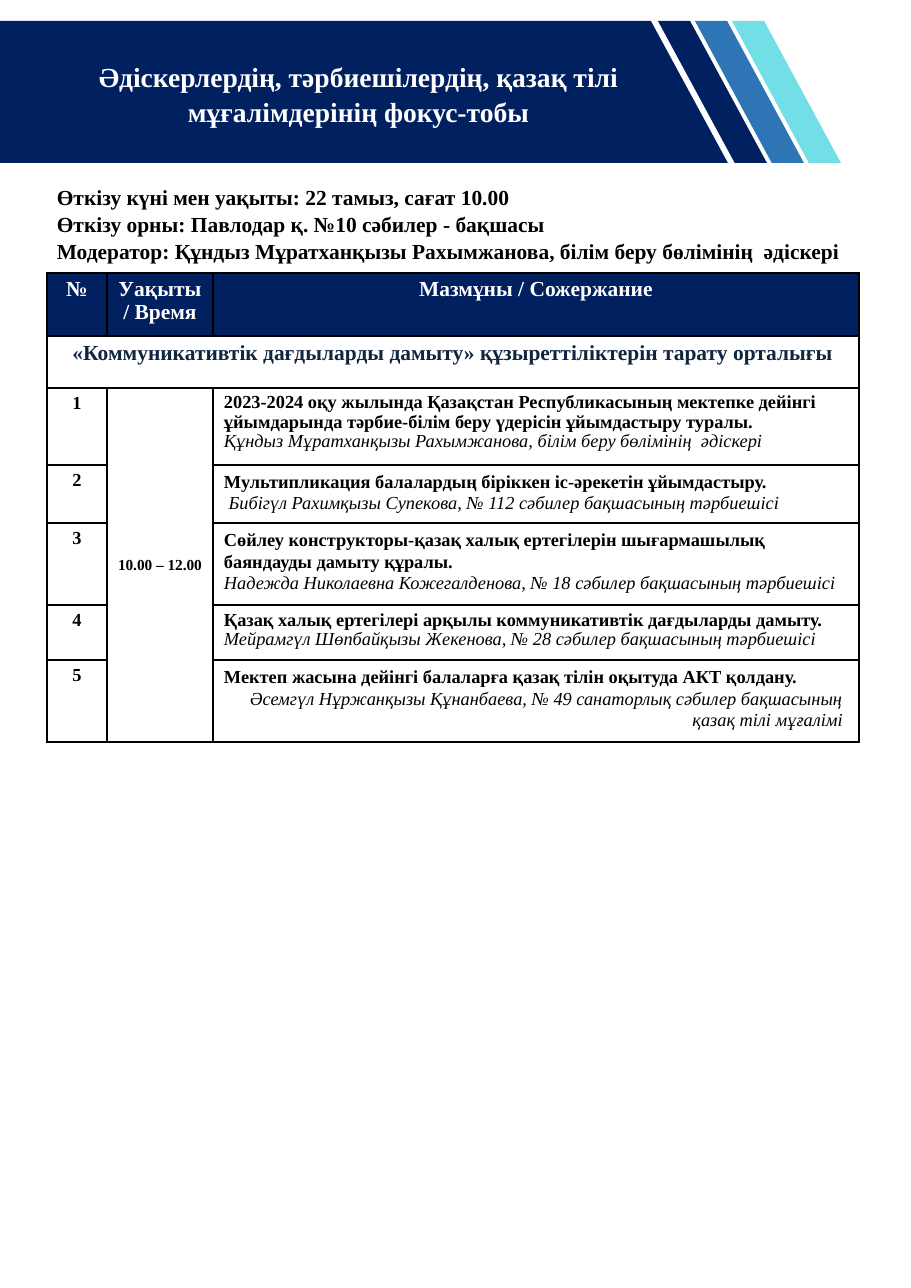
from lxml import etree
from pptx import Presentation
from pptx.dml.color import RGBColor
from pptx.enum.shapes import MSO_SHAPE
from pptx.enum.text import MSO_ANCHOR, PP_ALIGN
from pptx.oxml.ns import qn
from pptx.util import Pt

PX = 8298
FONT = "Times New Roman"
NAVY = RGBColor(0x00, 0x20, 0x60)
BLUE = RGBColor(0x2E, 0x75, 0xB6)
AQUA = RGBColor(0x71, 0xDF, 0xE5)
INK = RGBColor(0x10, 0x25, 0x3F)
BLACK = RGBColor(0, 0, 0)
WHITE = RGBColor(255, 255, 255)
LEFT, CENTER, RIGHT = PP_ALIGN.LEFT, PP_ALIGN.CENTER, PP_ALIGN.RIGHT
MIDDLE = MSO_ANCHOR.MIDDLE
PARALLELOGRAM = MSO_SHAPE.PARALLELOGRAM


def style(paragraph, size, color=BLACK, align=LEFT, spacing=1.0, italic=False):
    paragraph.alignment = align
    paragraph.line_spacing = spacing
    for run in paragraph.runs:
        run.font.name = FONT
        run.font.size = Pt(size)
        run.font.bold = not italic
        run.font.italic = italic
        run.font.color.rgb = color


def add_text(left, top, width, height, text, size, color, align):
    frame = slide.shapes.add_textbox(left * PX, top * PX, width * PX, height * PX).text_frame
    frame.word_wrap = True
    frame.text = text
    for paragraph in frame.paragraphs:
        style(paragraph, size, color, align, 1.05)


prs = Presentation()
prs.slide_width = 911 * PX
prs.slide_height = 1288 * PX
slide = prs.slides.add_slide(prs.slide_layouts[6])

outline = slide.shapes.build_freeform(0, 21, scale=PX)
outline.add_line_segments([(651, 21), (728, 163), (0, 163)], close=True)
banner = outline.convert_to_shape()
stripes = [(banner, NAVY)]
for i, color in enumerate((NAVY, BLUE, AQUA)):
    stripe = slide.shapes.add_shape(PARALLELOGRAM, (658 + 37 * i) * PX, 21 * PX, 109 * PX, 142 * PX)
    stripe.adjustments[0] = 0.705
    stripe._element.spPr.xfrm.set("flipV", "1")
    stripes.append((stripe, color))
for stripe, color in stripes:
    stripe.shadow.inherit = False
    stripe.fill.solid()
    stripe.fill.fore_color.rgb = color
    stripe.line.fill.background()

add_text(21, 53, 675, 78, "Әдіскерлердің, тәрбиешілердің, қазақ тілі мұғалімдерінің фокус-тобы",
         18, WHITE, CENTER)

HEADINGS = ["№", "Уақыты / Время", "Мазмұны / Сожержание"]
SECTION = "«Коммуникативтік дағдыларды дамыту» құзыреттіліктерін тарату орталығы"
TALKS = [
    ("2023-2024 оқу жылында Қазақстан Республикасының мектепке дейінгі ұйымдарында "
     "тәрбие-білім беру үдерісін ұйымдастыру туралы.",
     "Құндыз Мұратханқызы Рахымжанова, білім беру бөлімінің  әдіскері", 0.95, LEFT),
    ("Мультипликация балалардың біріккен іс-әрекетін ұйымдастыру.",
     " Бибігүл Рахимқызы Супекова, № 112 сәбилер бақшасының тәрбиешісі", 1.07, LEFT),
    ("Сөйлеу конструкторы-қазақ халық ертегілерін шығармашылық баяндауды дамыту құралы.",
     "Надежда Николаевна Кожегалденова, № 18 сәбилер бақшасының тәрбиешісі", 1.07, LEFT),
    ("Қазақ халық ертегілері арқылы коммуникативтік дағдыларды дамыту.",
     "Мейрамгүл Шөпбайқызы Жекенова, № 28 сәбилер бақшасының тәрбиешісі", 0.95, LEFT),
    ("Мектеп жасына дейінгі балаларға қазақ тілін оқытуда АКТ қолдану.",
     "Әсемгүл Нұржанқызы Құнанбаева, № 49 санаторлық сәбилер бақшасының қазақ тілі мұғалімі",
     1.07, RIGHT),
]
WIDTHS = [60, 106, 646]
HEIGHTS = [63, 52, 77, 58, 82, 55, 82]

agenda = slide.shapes.add_table(len(HEIGHTS), len(WIDTHS), 47 * PX, 273 * PX,
                                sum(WIDTHS) * PX, sum(HEIGHTS) * PX).table
for column, width in zip(agenda.columns, WIDTHS):
    column.width = width * PX
for row, height in zip(agenda.rows, HEIGHTS):
    row.height = height * PX

for r in range(len(HEIGHTS)):
    for c in range(len(WIDTHS)):
        cell = agenda.cell(r, c)
        if r == 0:
            cell.fill.solid()
            cell.fill.fore_color.rgb = NAVY
        else:
            cell.fill.background()
        properties = cell._tc.get_or_add_tcPr()
        for position, side in enumerate(("a:lnL", "a:lnR", "a:lnT", "a:lnB")):
            border = etree.Element(qn(side), w=str(Pt(1)))
            paint = etree.SubElement(border, qn("a:solidFill"))
            etree.SubElement(paint, qn("a:srgbClr"), val=str(BLACK))
            properties.insert(position, border)

for c, heading in enumerate(HEADINGS):
    cell = agenda.cell(0, c)
    cell.text = heading
    cell.margin_left = cell.margin_right = 6 * PX
    style(cell.text_frame.paragraphs[0], 14, WHITE, CENTER, 0.95)

section = agenda.cell(1, 0)
section.merge(agenda.cell(1, 2))
section.text = SECTION
style(section.text_frame.paragraphs[0], 14, INK, CENTER)

time_slot = agenda.cell(2, 1)
time_slot.merge(agenda.cell(6, 1))
time_slot.text = "10.00 – 12.00"
time_slot.vertical_anchor = MIDDLE
time_slot.margin_right = 4 * PX
style(time_slot.text_frame.paragraphs[0], 10)

for number, (topic, speaker, spacing, align) in enumerate(TALKS, start=1):
    number_cell = agenda.cell(number + 1, 0)
    number_cell.text = str(number)
    style(number_cell.text_frame.paragraphs[0], 12, align=CENTER)
    talk = agenda.cell(number + 1, 2)
    talk.text = topic + "\n" + speaker
    if align == RIGHT:
        talk.margin_right = 16 * PX
    topic_line, speaker_line = talk.text_frame.paragraphs
    style(topic_line, 12, spacing=spacing)
    style(speaker_line, 12, align=align, spacing=spacing, italic=True)

add_text(46, 177, 815, 115,
         "Өткізу күні мен уақыты: 22 тамыз, сағат 10.00\n"
         "Өткізу орны: Павлодар қ. №10 сәбилер - бақшасы\n"
         "Модератор: Құндыз Мұратханқызы Рахымжанова, білім беру бөлімінің  әдіскері",
         14, BLACK, LEFT)

prs.save("out.pptx")
